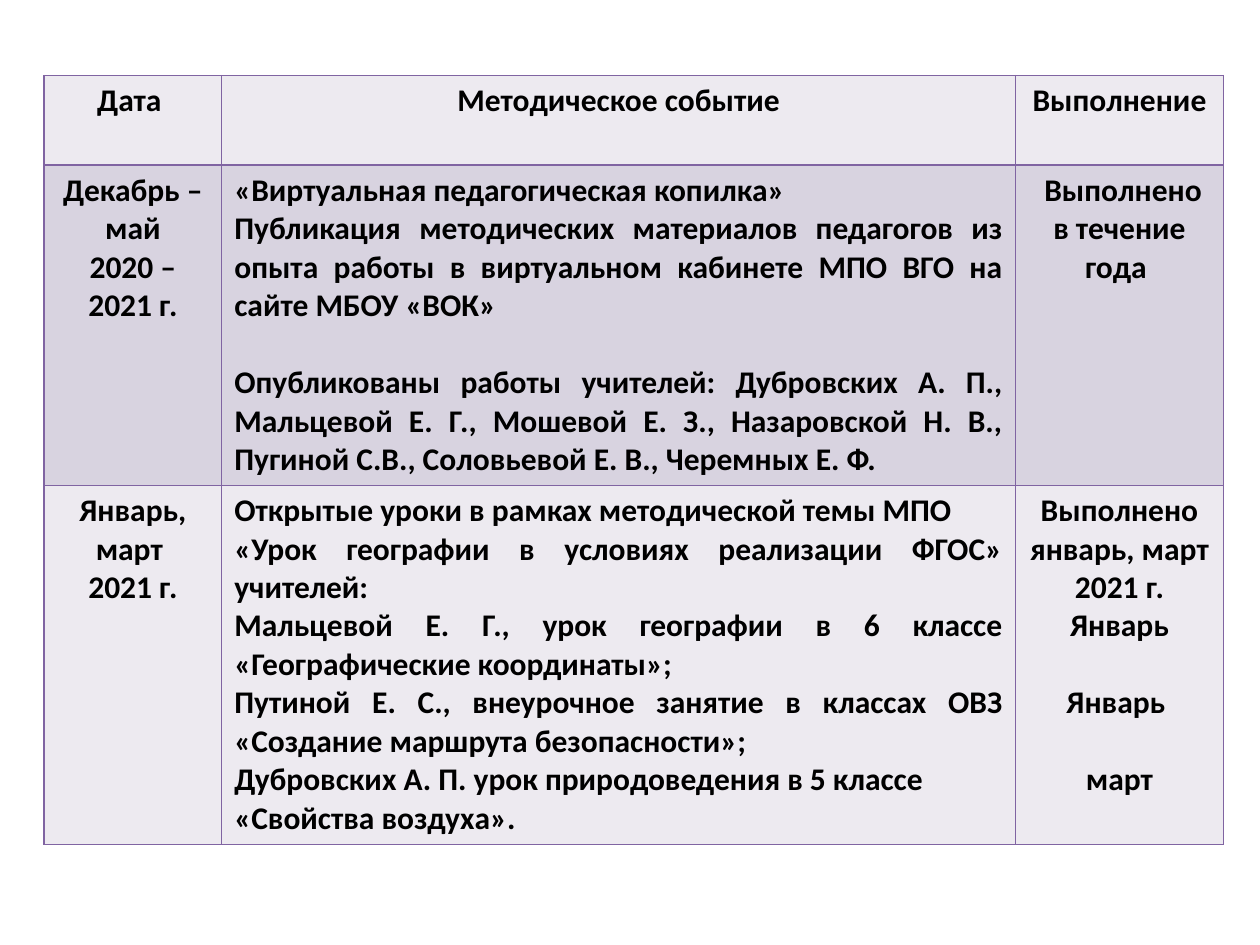
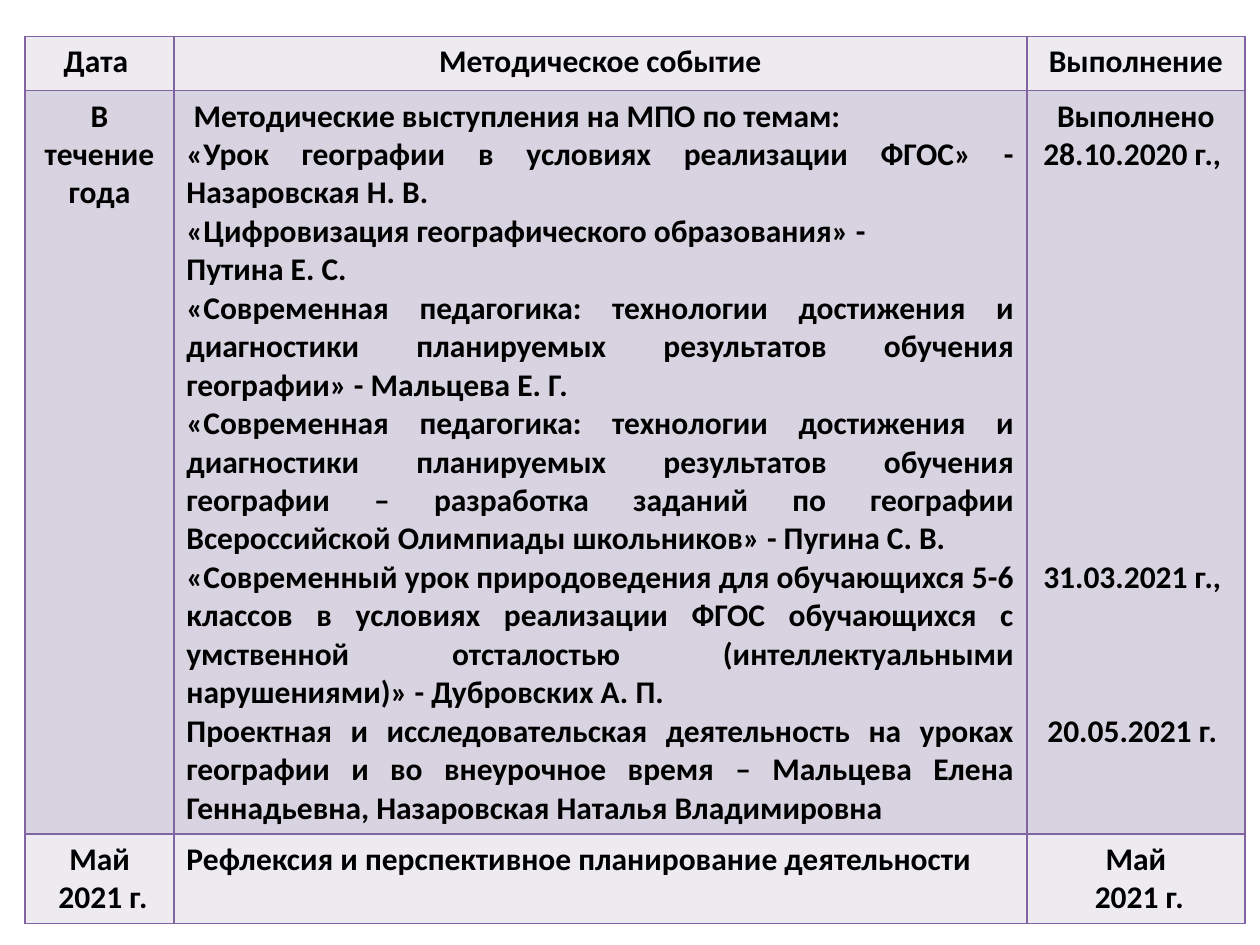
"""Build two slides with the plan of methodical events and its fulfilment."""
from dataclasses import dataclass

import lxml.etree
import pptx
import pptx.dml.color
import pptx.enum.text
import pptx.oxml.ns
import pptx.presentation
import pptx.table
import pptx.util

SLIDE_WIDTH = pptx.util.Inches(10)
SLIDE_HEIGHT = pptx.util.Inches(7.5)
GRID_COLUMNS = 200
GRID_ROWS = 150
BLANK_LAYOUT = 6

LIGHT_BAND = pptx.dml.color.RGBColor(0xED, 0xEA, 0xF0)
DARK_BAND = pptx.dml.color.RGBColor(0xD8, 0xD3, 0xE0)
BORDER = pptx.dml.color.RGBColor(0x80, 0x64, 0xA2)
TEXT = pptx.dml.color.RGBColor(0, 0, 0)
FONT_NAME = "Calibri"
FONT_SIZE = pptx.util.Pt(18)
LINE_PITCH = 22
BORDER_WIDTH = pptx.util.Pt(1)

CENTER = pptx.enum.text.PP_ALIGN.CENTER
JUSTIFY = pptx.enum.text.PP_ALIGN.JUSTIFY
COLUMN_ALIGNMENTS = (CENTER, JUSTIFY, CENTER)


@dataclass(frozen=True)
class Line:
    """A paragraph with the number of free lines above it."""

    text: str
    gap: int = 0


@dataclass(frozen=True)
class Event:
    """A table row: date, methodical event and fulfilment."""

    date: tuple[Line, ...]
    description: tuple[Line, ...]
    fulfilment: tuple[Line, ...]


@dataclass(frozen=True)
class EventTable:
    """A table placed on the slide grid, with its events."""

    left: float
    top: float
    widths: tuple[float, ...]
    heights: tuple[float, ...]
    events: tuple[Event, ...]


HEADER = Event(
    (Line("Дата "),), (Line("Методическое событие"),), (Line("Выполнение"),)
)

EVENT_TABLES = (
    EventTable(
        left=7, top=12, widths=(28.2, 126, 33), heights=(14.2, 50.8, 57),
        events=(
            Event(
                (Line("Декабрь – май"), Line("2020 – 2021 г.")),
                (
                    Line("«Виртуальная педагогическая копилка» "),
                    Line("Публикация методических материалов педагогов из опыта "
                         "работы в виртуальном кабинете МПО ВГО на сайте МБОУ «ВОК»"),
                    Line("Опубликованы работы учителей: Дубровских А. П., "
                         "Мальцевой Е. Г., Мошевой Е. З., Назаровской Н. В., "
                         "Пугиной С.В., Соловьевой Е. В., Черемных Е. Ф.", gap=1),
                ),
                (Line(" Выполнено"), Line("в течение года ")),
            ),
            Event(
                (Line("Январь, март "), Line("2021 г.")),
                (
                    Line("Открытые уроки в рамках методической темы МПО"),
                    Line("«Урок географии в условиях реализации ФГОС» учителей:"),
                    Line("Мальцевой Е. Г., урок географии в 6 классе "
                         "«Географические координаты»;"),
                    Line("Путиной Е. С., внеурочное занятие в классах ОВЗ "
                         "«Создание маршрута безопасности»;"),
                    Line("Дубровских А. П. урок природоведения в 5 классе"),
                    Line("«Свойства воздуха»."),
                ),
                (
                    Line("Выполнено"),
                    Line("январь, март "),
                    Line("2021 г."),
                    Line("Январь"),
                    Line("Январь ", gap=1),
                    Line("март", gap=1),
                ),
            ),
        ),
    ),
    EventTable(
        left=4, top=5.8, widths=(23.6, 135.4, 34.6), heights=(8.6, 118, 14.2),
        events=(
            Event(
                (Line("В течение года"),),
                (
                    Line(" Методические выступления на МПО по темам:"),
                    Line("«Урок географии в условиях реализации ФГОС» - "
                         "Назаровская Н. В."),
                    Line("«Цифровизация географического образования» -"),
                    Line("Путина Е. С."),
                    Line("«Современная педагогика: технологии достижения и "
                         "диагностики планируемых результатов обучения "
                         "географии» - Мальцева Е. Г."),
                    Line("«Современная педагогика: технологии достижения и "
                         "диагностики планируемых результатов обучения географии "
                         "– разработка заданий по географии Всероссийской "
                         "Олимпиады школьников» - Пугина С. В."),
                    Line("«Современный урок природоведения для обучающихся 5-6 "
                         "классов в условиях реализации ФГОС обучающихся с "
                         "умственной отсталостью (интеллектуальными "
                         "нарушениями)» - Дубровских А. П."),
                    Line("Проектная и исследовательская деятельность на уроках "
                         "географии и во внеурочное время – Мальцева Елена "
                         "Геннадьевна, Назаровская Наталья Владимировна"),
                ),
                (
                    Line("Выполнено"),
                    Line("28.10.2020 г., "),
                    Line("31.03.2021 г., ", gap=10),
                    Line("20.05.2021 г. ", gap=3),
                ),
            ),
            Event(
                (Line("Май"), Line(" 2021 г.")),
                (Line("Рефлексия и перспективное планирование деятельности"),),
                (Line("Май"), Line(" 2021 г.")),
            ),
        ),
    ),
)


def across(columns: float) -> int:
    """Return the length of a number of grid columns."""
    return round(SLIDE_WIDTH * columns / GRID_COLUMNS)


def down(rows: float) -> int:
    """Return the length of a number of grid rows."""
    return round(SLIDE_HEIGHT * rows / GRID_ROWS)


def draw_borders(cell: pptx.table._Cell) -> None:
    """Outline all four sides of a cell."""
    properties = cell._tc.get_or_add_tcPr()
    qualify = pptx.oxml.ns.qn
    for side in ("lnL", "lnR", "lnT", "lnB"):
        border = lxml.etree.SubElement(
            properties, qualify(f"a:{side}"), w=str(BORDER_WIDTH)
        )
        fill = lxml.etree.SubElement(border, qualify("a:solidFill"))
        lxml.etree.SubElement(fill, qualify("a:srgbClr"), val=str(BORDER))


def write_lines(
    cell: pptx.table._Cell,
    lines: tuple[Line, ...],
    alignment: pptx.enum.text.PP_ALIGN,
) -> None:
    """Write the lines of a cell as paragraphs."""
    frame = cell.text_frame
    for index, line in enumerate(lines):
        paragraph = frame.add_paragraph() if index else frame.paragraphs[0]
        paragraph.alignment = alignment
        if line.gap:
            paragraph.space_before = pptx.util.Pt(line.gap * LINE_PITCH)
        run = paragraph.add_run()
        run.text = line.text
        run.font.name = FONT_NAME
        run.font.size = FONT_SIZE
        run.font.bold = True
        run.font.color.rgb = TEXT


def add_event_slide(
    presentation: pptx.presentation.Presentation, plan: EventTable
) -> None:
    """Add a slide with one table of events."""
    slide = presentation.slides.add_slide(presentation.slide_layouts[BLANK_LAYOUT])
    events = (HEADER, *plan.events)
    table = slide.shapes.add_table(
        len(events), len(plan.widths), across(plan.left), down(plan.top),
        across(sum(plan.widths)), down(sum(plan.heights)),
    ).table
    table.first_row = False
    table.horz_banding = False
    for column, width in zip(table.columns, plan.widths):
        column.width = across(width)
    for row, height in zip(table.rows, plan.heights):
        row.height = down(height)
    for row_index, event in enumerate(events):
        contents = (event.date, event.description, event.fulfilment)
        for column_index, lines in enumerate(contents):
            cell = table.cell(row_index, column_index)
            draw_borders(cell)
            cell.fill.solid()
            cell.fill.fore_color.rgb = DARK_BAND if row_index % 2 else LIGHT_BAND
            alignment = COLUMN_ALIGNMENTS[column_index] if row_index else CENTER
            write_lines(cell, lines, alignment)


def main() -> None:
    """Build and save the presentation."""
    presentation = pptx.Presentation()
    presentation.slide_width = SLIDE_WIDTH
    presentation.slide_height = SLIDE_HEIGHT
    for plan in EVENT_TABLES:
        add_event_slide(presentation, plan)
    presentation.save("out.pptx")


if __name__ == "__main__":
    main()
